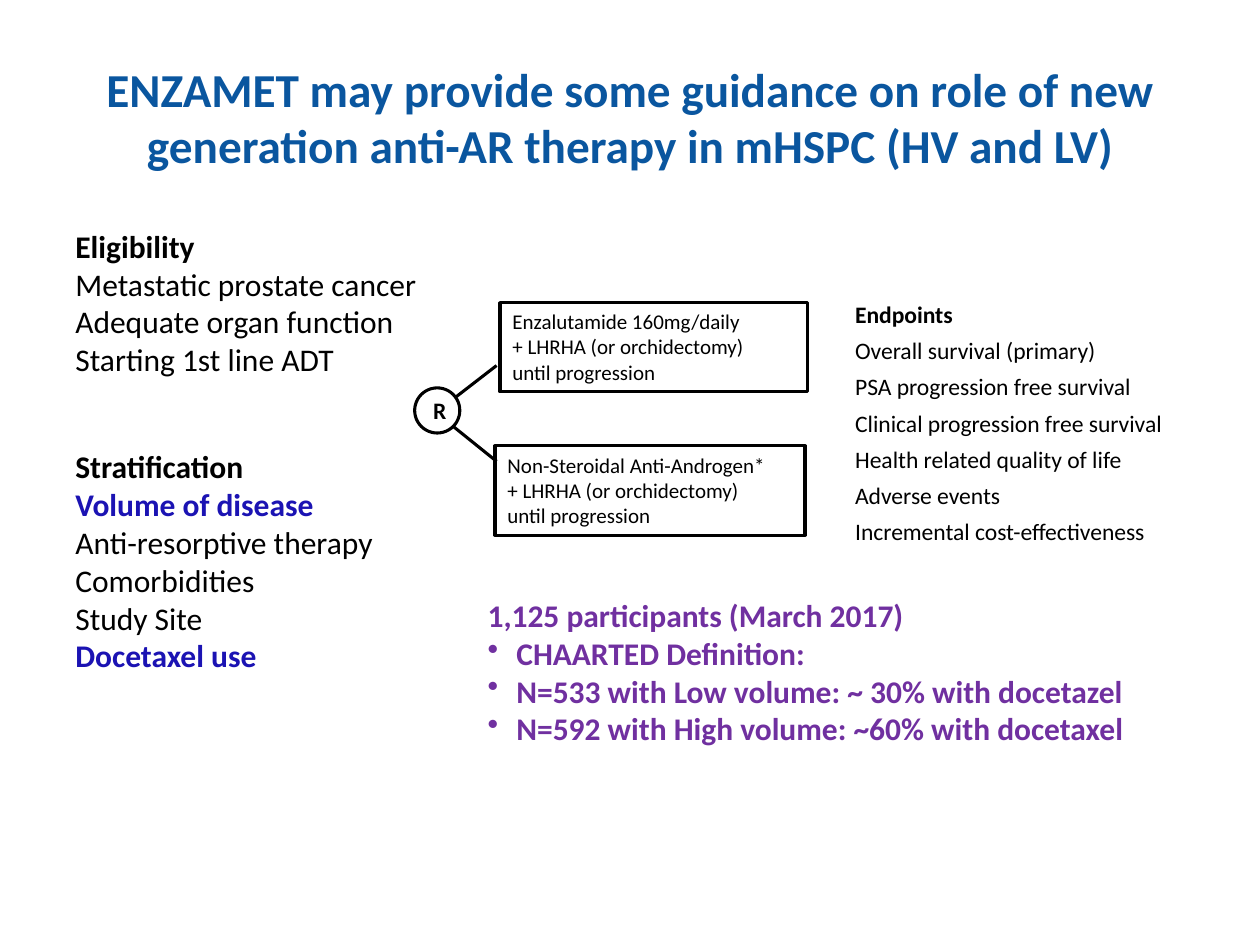
from copy import deepcopy

from lxml.etree import SubElement
from pptx import Presentation
from pptx.dml.color import RGBColor
from pptx.enum.shapes import MSO_CONNECTOR as Connector, MSO_SHAPE as Shape
from pptx.enum.text import MSO_ANCHOR as Anchor, PP_ALIGN as Align
from pptx.oxml.ns import qn
from pptx.util import Cm, Pt

BLACK, WHITE = "000000", "FFFFFF"
TITLE_BLUE, ACCENT_BLUE, PURPLE = "0A569F", "1B13B3", "7030A0"
LINE_WIDTH = Pt(1.75)


def rgb(value):
    return RGBColor.from_string(value)


def add_bullet(para, indent=0.58):
    props = para._p.get_or_add_pPr()
    props.set("marL", str(Cm(indent)))
    props.set("indent", str(-Cm(indent)))
    SubElement(props, qn("a:buChar"), char="•")


def write(para, text, size=18, color=BLACK, bold=False, align=Align.LEFT,
          before=0, after=0, bullet=False):
    """Fill a paragraph; a vertical tab in the text breaks the line."""
    para.text = text
    para.alignment = align
    para.space_before, para.space_after = Pt(before), Pt(after)
    if bullet:
        add_bullet(para)
    for span in para.runs:
        font = span.font
        font.name, font.size, font.bold = "Calibri", Pt(size), bold
        font.color.rgb = rgb(color)
    # Line breaks take the size of the text around them
    for line_break in para._p.findall(qn("a:br")):
        line_break.append(deepcopy(para.runs[0]._r.rPr))


def add_text(page, area, lines, anchor=Anchor.TOP, **common):
    """Place a text box; each line is a text and its own format."""
    frame = page.shapes.add_textbox(*map(Cm, area)).text_frame
    frame.word_wrap = True
    frame.vertical_anchor = anchor
    for number, (text, own) in enumerate(lines):
        para = frame.add_paragraph() if number else frame.paragraphs[0]
        write(para, text, **{**common, **own})


def add_outlined(page, kind, area, text, anchor=Anchor.TOP, **style):
    shape = page.shapes.add_shape(kind, *map(Cm, area))
    shape.shadow.inherit = False
    shape.fill.solid()
    shape.fill.fore_color.rgb = rgb(WHITE)
    shape.line.color.rgb = rgb(BLACK)
    shape.line.width = LINE_WIDTH
    frame = shape.text_frame
    frame.word_wrap = True
    frame.vertical_anchor = anchor
    write(frame.paragraphs[0], text, **style)
    return shape


def add_line(page, start, end):
    line = page.shapes.add_connector(Connector.STRAIGHT, *map(Cm, start + end))
    line.line.color.rgb = rgb(BLACK)
    line.line.width = LINE_WIDTH
    SubElement(line._element.spPr, qn("a:effectLst"))


def add_title(page, area, text):
    title = page.shapes.title
    title.left, title.top, title.width, title.height = map(Cm, area)
    title.text_frame.vertical_anchor = Anchor.MIDDLE
    write(title.text_frame.paragraphs[0], text, size=27, color=TITLE_BLUE,
          bold=True, align=Align.CENTER)


def add_criteria(page, area):
    heading, accent = {"bold": True}, {"bold": True, "color": ACCENT_BLUE}
    add_text(page, area, [
        ("Eligibility", heading),
        ("Metastatic prostate cancer", {}),
        ("Adequate organ function", {}),
        ("Starting 1st line ADT", {}),
        ("Stratification", {**heading, "before": 39.6}),
        ("Volume of disease", accent),
        ("Anti-resorptive therapy", {}),
        ("Comorbidities", {}),
        ("Study Site", {}),
        ("Docetaxel use", accent),
    ])


def add_randomisation(page, left, top):
    # Treatment arms: offset, width and treatment
    arms = [(1.72, 0, 6.2, "Enzalutamide 160mg/daily"),
            (1.62, 2.89, 6.25, "Non-Steroidal Anti-Androgen*")]
    for x, y, width, treatment in arms:
        add_outlined(page, Shape.RECTANGLE, (left + x, top + y, width, 1.8),
                     f"{treatment}\v+ LHRHA (or orchidectomy)\vuntil progression",
                     size=12)
    # Branches from the randomisation point
    for start_y, end_y in [(2.46, 3.2), (1.98, 1.27)]:
        add_line(page, (left + 0.73, top + start_y), (left + 1.65, top + end_y))
    # Randomisation point
    circle = add_outlined(page, Shape.OVAL, (left, top + 1.72, 0.91, 0.91), "R",
                          anchor=Anchor.MIDDLE, size=13.5, bold=True,
                          align=Align.CENTER)
    frame = circle.text_frame
    frame.word_wrap = False
    frame.margin_left = Cm(0.1)
    frame.margin_right = frame.margin_top = frame.margin_bottom = 0


def add_endpoints(page, area):
    endpoints = ["Overall survival (primary)", "PSA progression free survival",
                 "Clinical progression free survival",
                 "Health related quality of life", "Adverse events",
                 "Incremental cost-effectiveness"]
    add_text(page, area,
             [("Endpoints", {"bold": True})] + [(name, {}) for name in endpoints],
             anchor=Anchor.MIDDLE, size=13.5, after=4.5)


def add_participants(page, area):
    groups = ["CHAARTED Definition:",
              "N=533 with Low volume: ~ 30% with docetazel",
              "N=592 with High volume: ~60% with docetaxel"]
    add_text(page, area,
             [("1,125 participants (March 2017)", {})]
             + [(group, {"bullet": True}) for group in groups],
             color=PURPLE, bold=True)


def main():
    deck = Presentation()
    deck.slide_width, deck.slide_height = Cm(25.4), Cm(19.05)
    page = deck.slides.add_slide(deck.slide_layouts[5])
    add_title(page, (1.27, 0.76, 22.86, 3.18),
              "ENZAMET may provide some guidance on role of new generation "
              "anti-AR therapy in mHSPC (HV and LV)")
    add_criteria(page, (1.27, 4.45, 22.86, 12.57))
    add_endpoints(page, (16.99, 5.84, 7.29, 5.36))
    add_participants(page, (9.58, 11.89, 14.83, 3.33))
    add_randomisation(page, 8.36, 6.1)
    deck.save("out.pptx")


if __name__ == "__main__":
    main()
